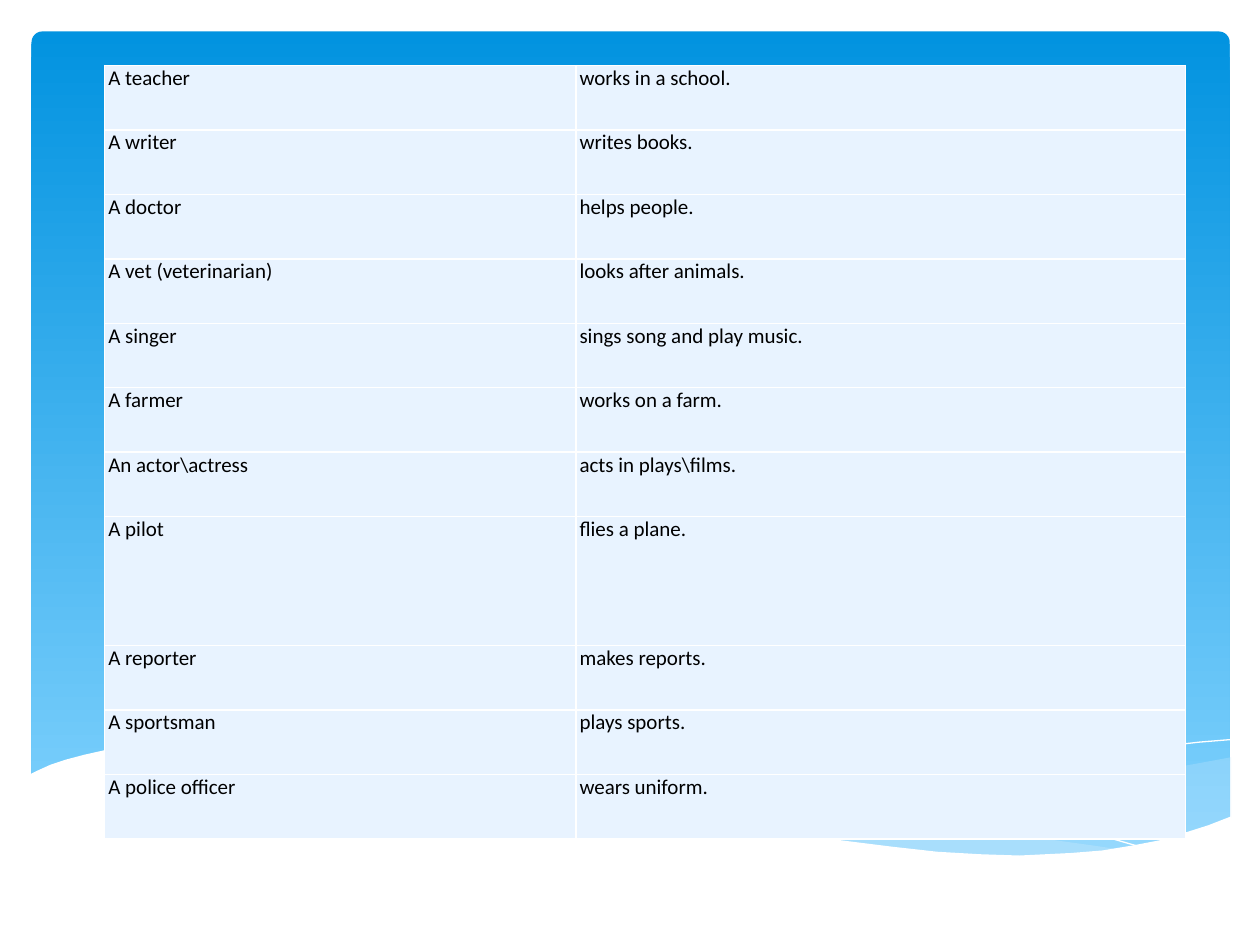
from dataclasses import dataclass

from lxml import etree
from pptx import Presentation
from pptx import util as u
from pptx.dml import color
from pptx.enum import shapes
from pptx.oxml import ns


@dataclass(frozen=True)
class Theme:
    sky_top: str = "0293E0"
    sky_bottom: str = "83D3FE"
    wave: str = "C6E7FC"
    white: str = "FFFFFF"
    cell: str = "E8F3FF"
    text: str = "000000"
    font: str = "Calibri"
    size: float = 12
    border: float = 1


@dataclass(frozen=True)
class Box:
    left: float
    top: float
    width: float
    height: float


THEME = Theme()

JOBS = [
    ("A teacher", "works in a school."),
    ("A writer", "writes books."),
    ("A doctor", "helps people."),
    ("A vet (veterinarian)", "looks after animals."),
    ("A singer", "sings song and play music."),
    ("A farmer", "works on a farm."),
    ("An actor\\actress", "acts in plays\\films."),
    ("A pilot", "flies a plane."),
    ("A reporter", "makes reports."),
    ("A sportsman", "plays sports."),
    ("A police officer", "wears uniform."),
]
DOUBLE_ROW = "A pilot"

# Wave outlines, in inches from the corner of the backdrop
RIGHT_WAVE = [
    (9.77, 6.01), (9.5, 6.06), (9.22, 6.11), (8.92, 6.18), (8.62, 6.25),
    (8.06, 6.39), (7.54, 6.5), (7.07, 6.59), (6.62, 6.67), (6.92, 6.71),
    (7.33, 6.76), (7.7, 6.79), (8.04, 6.8), (8.45, 6.79), (8.82, 6.75),
    (9.14, 6.69), (9.37, 6.63), (9.51, 6.59), (9.64, 6.54), (9.77, 6.49),
]
LONG_WAVE = [
    (8.94, 6.75), (8.67, 6.71), (8.38, 6.67), (8.08, 6.62), (7.76, 6.56),
    (7.42, 6.49), (7.07, 6.42), (6.69, 6.33), (6.3, 6.24), (5.99, 6.16),
    (5.7, 6.1), (5.42, 6.04), (5.15, 6), (4.89, 5.96), (4.42, 5.91),
    (4, 5.88), (3.62, 5.87), (3.28, 5.89), (2.87, 5.93), (3.23, 5.98),
    (3.63, 6.04), (4.05, 6.13), (4.5, 6.24), (4.91, 6.34), (5.3, 6.42),
    (5.67, 6.5), (6.02, 6.57), (6.35, 6.63), (6.66, 6.68), (6.96, 6.72),
    (7.23, 6.76), (7.49, 6.78), (7.86, 6.8), (8.39, 6.8), (8.68, 6.78),
]
FALLING_LINE = [
    (3.1, 5.97), (3.29, 5.94), (3.53, 5.91), (3.88, 5.89), (4.51, 5.89),
    (4.89, 5.92), (5.33, 5.96), (5.82, 6.02), (6.37, 6.1), (6.96, 6.21),
    (7.61, 6.35), (8.32, 6.52), (8.7, 6.62), (9.08, 6.73),
]
RISING_LINE = [
    (6.14, 6.59), (6.53, 6.48), (6.96, 6.37), (7.49, 6.25), (8.07, 6.12),
    (8.67, 6), (8.97, 5.96), (9.25, 5.92), (9.52, 5.89), (9.76, 5.87),
]
WHITE_WAVE = [
    (9.77, 6.48), (9.59, 6.55), (9.4, 6.61), (9.2, 6.67), (8.99, 6.71),
    (8.75, 6.75), (8.5, 6.77), (8.09, 6.79), (7.78, 6.78), (7.44, 6.76),
    (7.08, 6.72), (6.68, 6.67), (6.26, 6.6), (5.79, 6.51), (5.29, 6.41),
    (4.75, 6.29), (4.18, 6.15), (3.65, 6.04), (3.16, 5.96), (2.71, 5.9),
    (2.3, 5.87), (1.93, 5.86), (1.61, 5.86), (1.32, 5.88), (1.06, 5.91),
    (0.85, 5.95), (0.67, 5.99), (0.52, 6.03), (0.4, 6.07), (0.29, 6.12),
    (0.23, 6.15), (0.23, 7.31), (9.77, 7.31),
]


def rgb(value):
    return color.RGBColor.from_string(value)


def write_text(frame, text, *, size=THEME.size, font=THEME.font, ink=THEME.text):
    run = frame.paragraphs[0].add_run()
    run.text = text
    run.font.size = u.Pt(size)
    run.font.name = font
    run.font.color.rgb = rgb(ink)


def add_outline(slide, box, points, *, fill=None, opacity=100, line=None):
    """Draw a closed filled wave, or an open hairline when there is no fill."""
    corners = [(u.Inches(box.left + x), u.Inches(box.top + y)) for x, y in points]
    builder = slide.shapes.build_freeform(*corners[0])
    builder.add_line_segments(corners[1:], close=fill is not None)
    shape = builder.convert_to_shape()
    shape.shadow.inherit = False
    if fill:
        shape.fill.solid()
        shape.fill.fore_color.rgb = rgb(fill)
        if opacity < 100:
            ink = next(shape.fill._xPr.iter(ns.qn("a:srgbClr")))
            etree.SubElement(ink, ns.qn("a:alpha"), val=str(opacity * 1000))
    else:
        shape.fill.background()
    if line:
        shape.line.color.rgb = rgb(line)
        shape.line.width = u.Pt(0)
    else:
        shape.line.fill.background()


def add_backdrop(slide, box):
    # Sky panel
    panel = slide.shapes.add_shape(
        shapes.MSO_SHAPE.ROUNDED_RECTANGLE,
        u.Inches(box.left + 0.25), u.Inches(box.top + 0.25),
        u.Inches(box.width - 0.49), u.Inches(box.height - 0.9))
    panel.adjustments[0] = 0.013
    panel.shadow.inherit = False
    panel.line.fill.background()
    panel.fill.gradient()
    panel.fill.gradient_angle = 270
    for stop, value in zip(panel.fill.gradient_stops, (THEME.sky_top, THEME.sky_bottom)):
        stop.color.rgb = rgb(value)

    # Waves along the lower edge
    add_outline(slide, box, RIGHT_WAVE, fill=THEME.wave, opacity=29)
    add_outline(slide, box, LONG_WAVE, fill=THEME.wave, opacity=40)
    add_outline(slide, box, FALLING_LINE, line=THEME.white)
    add_outline(slide, box, RISING_LINE, line=THEME.white)
    add_outline(slide, box, WHITE_WAVE, fill=THEME.white)


def format_cell(cell):
    cell.margin_left = cell.margin_right = u.Inches(0.03)
    cell.margin_top = cell.margin_bottom = 0
    properties = cell._tc.get_or_add_tcPr()
    for side in ("lnL", "lnR", "lnT", "lnB"):
        border = etree.SubElement(properties, ns.qn(f"a:{side}"), w=str(u.Pt(THEME.border)))
        solid = etree.SubElement(border, ns.qn("a:solidFill"))
        etree.SubElement(solid, ns.qn("a:srgbClr"), val=THEME.white)
    cell.fill.solid()
    cell.fill.fore_color.rgb = rgb(THEME.cell)


def add_jobs_table(slide, box):
    table = slide.shapes.add_table(
        len(JOBS), 2, u.Inches(box.left), u.Inches(box.top),
        u.Inches(box.width), u.Inches(box.height)).table
    table.first_row = table.horz_banding = False
    job_width = 3.74
    table.columns[0].width = u.Inches(job_width)
    table.columns[1].width = u.Inches(box.width - job_width)

    # One row is twice as tall as the others
    row_height = box.height / (len(JOBS) + 1)
    for row, entry in zip(table.rows, JOBS):
        row.height = u.Inches(row_height * (2 if entry[0] == DOUBLE_ROW else 1))
        for cell, text in zip(row.cells, entry):
            format_cell(cell)
            write_text(cell.text_frame, text)


def main():
    presentation = Presentation()
    presentation.slide_width = u.Inches(10)
    presentation.slide_height = u.Inches(7.5)
    slide = presentation.slides.add_slide(presentation.slide_layouts[6])
    add_backdrop(slide, Box(0, 0, 10, 7.5))
    add_jobs_table(slide, Box(0.83, 0.52, 8.58, 6.14))
    presentation.save("out.pptx")


if __name__ == "__main__":
    main()
